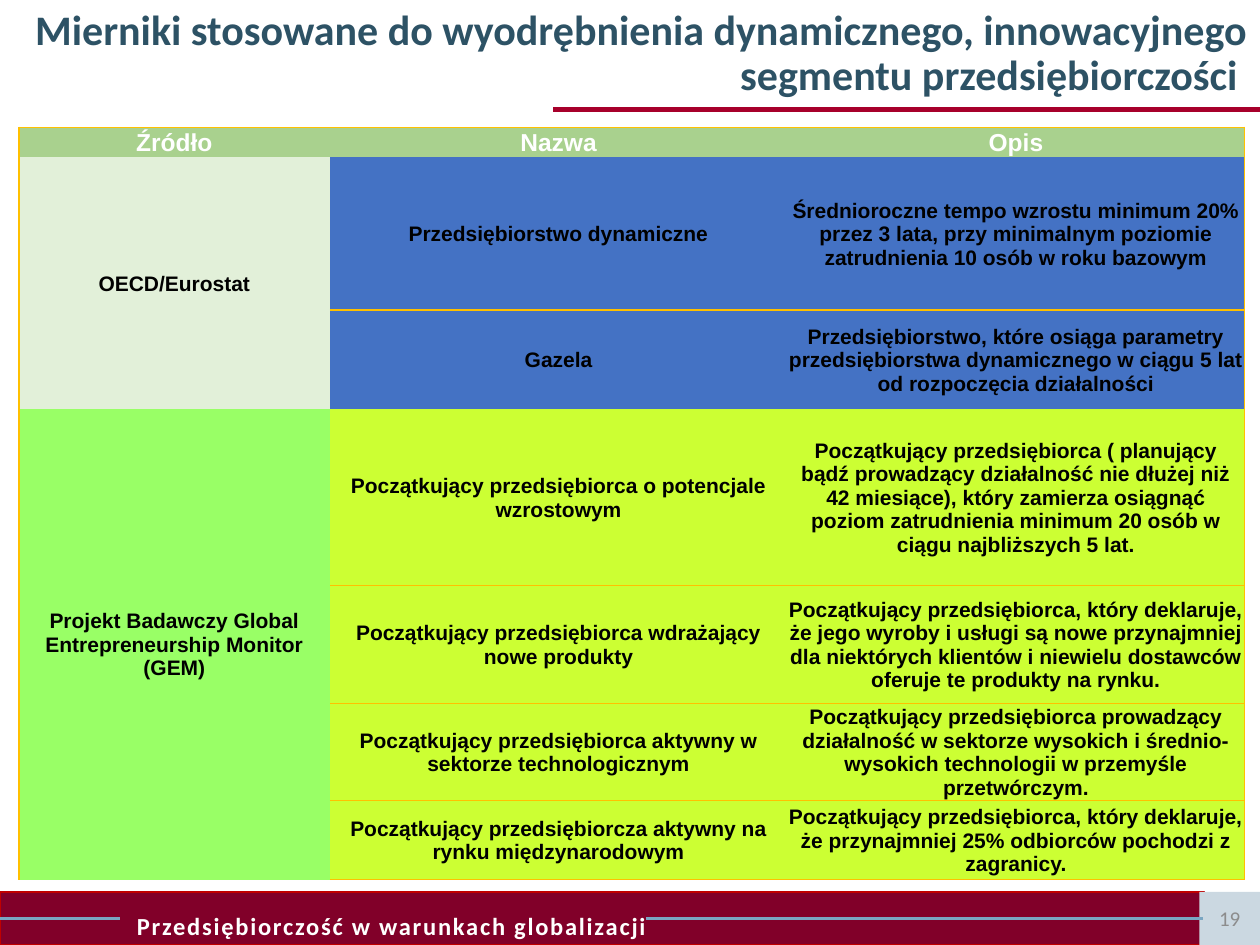
from lxml import etree
from pptx import Presentation
from pptx.dml.color import RGBColor
from pptx.enum.shapes import MSO_CONNECTOR, MSO_SHAPE
from pptx.enum.text import MSO_ANCHOR, MSO_AUTO_SIZE, PP_ALIGN
from pptx.oxml.ns import qn
from pptx.util import Cm, Pt

LEFT, CENTER, RIGHT = PP_ALIGN.LEFT, PP_ALIGN.CENTER, PP_ALIGN.RIGHT
MIDDLE = MSO_ANCHOR.MIDDLE
RECTANGLE = MSO_SHAPE.RECTANGLE
STRAIGHT = MSO_CONNECTOR.STRAIGHT

COLORS = {
    "title": "2D5265", "rule": "A7002B", "footer": "810029",
    "footer_edge": "C00000", "footer_line": "7AA6C2",
    "number_box": "CBD8E1", "number": "8C8C8C",
    "white": "FFFFFF", "black": "000000", "gold": "FFC000",
    "header": "A9D18E", "oecd": "E2F0D9", "blue": "4472C4",
    "gem": "99FF66", "lime": "CCFF33",
}


def color(name):
    return RGBColor.from_string(COLORS[name])


def write(text_frame, text, size, fill, font="Calibri", bold=True,
          align=CENTER, line_spacing=None):
    """Fill a text frame with one formatted paragraph and return it."""
    text_frame.word_wrap = True
    paragraph = text_frame.paragraphs[0]
    paragraph.alignment = align
    if line_spacing:
        paragraph.line_spacing = line_spacing
    run = paragraph.add_run()
    run.text = text
    run.font.name = font
    run.font.size = Pt(size)
    run.font.bold = bold
    run.font.color.rgb = color(fill)
    return paragraph


presentation = Presentation()
presentation.slide_width = Cm(25.4)
presentation.slide_height = Cm(19.05)
slide = presentation.slides.add_slide(presentation.slide_layouts[5])

# Title
title = slide.shapes.title
title.left, title.top, title.width, title.height = Cm(0), Cm(0), Cm(25.4), Cm(2.18)
title.text_frame.auto_size = MSO_AUTO_SIZE.NONE
title.text_frame.vertical_anchor = MIDDLE
write(title.text_frame,
      "Mierniki stosowane do wyodrębnienia dynamicznego, innowacyjnego "
      "segmentu przedsiębiorczości ",
      24, "title", align=RIGHT, line_spacing=0.9)

# Footer bar and page number
footer_top, footer_height = 17.98, 1.07
footer_boxes = []
for left, width, fill in [(0, 24.28, "footer"), (24.18, 1.22, "number_box")]:
    shape = slide.shapes.add_shape(
        RECTANGLE, Cm(left), Cm(footer_top), Cm(width), Cm(footer_height))
    shape.shadow.inherit = False
    shape.fill.solid()
    shape.fill.fore_color.rgb = color(fill)
    shape.line.fill.background()
    shape.text_frame.vertical_anchor = MIDDLE
    footer_boxes.append(shape)
footer, number_box = footer_boxes
footer.line.color.rgb = color("footer_edge")
footer.line.width = Pt(0.75)

paragraph = write(footer.text_frame, "Przedsiębiorczość w warunkach globalizacji",
                  14, "white", align=LEFT, line_spacing=1.5)
paragraph_properties = paragraph._p.get_or_add_pPr()
paragraph_properties.set("marL", str(Cm(3.25)))
paragraph_properties.set("indent", str(Cm(-0.74)))
paragraph.runs[0]._r.get_or_add_rPr().set("spc", "100")
write(number_box.text_frame, "19", 12, "number", bold=False)

# Rules: left, right, height on the slide, colour, width
rules = [
    (11.15, 25.4, 2.21, "rule", 3),
    (13.03, 24.26, 18.52, "footer_line", 1.75),
    (0, 2.41, 18.52, "footer_line", 1.75),
]
for left, right, top, line_color, width in rules:
    rule = slide.shapes.add_connector(STRAIGHT, Cm(left), Cm(top), Cm(right), Cm(top))
    rule.line.color.rgb = color(line_color)
    rule.line.width = Pt(width)
    etree.SubElement(rule._element.spPr, qn("a:effectLst"))

# Table: source, name, description, fill of the source, fill of the rest
rows = [
    ("Źródło", "Nazwa", "Opis", "header", "header"),
    ("OECD/Eurostat", "Przedsiębiorstwo dynamiczne",
     "Średnioroczne tempo wzrostu minimum 20% przez 3 lata, przy minimalnym "
     "poziomie zatrudnienia 10 osób w roku bazowym", "oecd", "blue"),
    ("", "Gazela",
     "Przedsiębiorstwo, które osiąga parametry przedsiębiorstwa dynamicznego "
     "w ciągu 5 lat od rozpoczęcia działalności", "oecd", "blue"),
    ("Projekt Badawczy Global Entrepreneurship Monitor (GEM)",
     "Początkujący przedsiębiorca o potencjale wzrostowym",
     "Początkujący przedsiębiorca ( planujący bądź prowadzący działalność nie "
     "dłużej niż 42 miesiące), który zamierza osiągnąć poziom zatrudnienia "
     "minimum 20 osób w ciągu najbliższych 5 lat.", "gem", "lime"),
    ("", "Początkujący przedsiębiorca wdrażający nowe produkty",
     "Początkujący przedsiębiorca, który deklaruje, że jego wyroby i usługi są "
     "nowe przynajmniej dla niektórych klientów i niewielu dostawców oferuje "
     "te produkty na rynku.", "gem", "lime"),
    ("", "Początkujący przedsiębiorca aktywny w sektorze technologicznym",
     "Początkujący przedsiębiorca prowadzący działalność w sektorze wysokich i "
     "średnio-wysokich technologii w przemyśle przetwórczym.", "gem", "lime"),
    ("", "Początkujący przedsiębiorcza aktywny na rynku międzynarodowym",
     "Początkujący przedsiębiorca, który deklaruje, że przynajmniej 25% "
     "odbiorców pochodzi z zagranicy.", "gem", "lime"),
]
column_widths = [6.27, 9.22, 9.22]
row_heights = [0.6, 3.08, 2, 3.55, 2.38, 1.96, 1.59]
last_row, last_column = len(rows) - 1, len(column_widths) - 1

table = slide.shapes.add_table(
    len(rows), len(column_widths), Cm(0.38), Cm(2.57),
    Cm(sum(column_widths)), Cm(sum(row_heights))).table
for column, width in zip(table.columns, column_widths):
    column.width = Cm(width)
for row, height in zip(table.rows, row_heights):
    row.height = Cm(height)
for first, last in [(1, 2), (3, 6)]:
    table.cell(first, 0).merge(table.cell(last, 0))

for i, (*texts, source_fill, row_fill) in enumerate(rows):
    for j, text in enumerate(texts):
        cell = table.cell(i, j)
        cell.vertical_anchor = MIDDLE
        cell.margin_left = cell.margin_right = cell.margin_top = Cm(0.03)
        cell.margin_bottom = Cm(0)
        # Gold outer frame, and gold lines between the rows of one source
        gold_edges = {
            "a:lnL": j == 0,
            "a:lnR": j == last_column,
            "a:lnT": i == 0 or (j > 0 and i in (2, 4, 5, 6)),
            "a:lnB": i == last_row or (j > 0 and i in (1, 3, 4, 5)),
        }
        for tag, is_gold in gold_edges.items():
            edge = etree.SubElement(cell._tc.get_or_add_tcPr(), qn(tag), w=str(Pt(1)))
            if is_gold:
                solid = etree.SubElement(edge, qn("a:solidFill"))
                etree.SubElement(solid, qn("a:srgbClr"), val=COLORS["gold"])
            else:
                etree.SubElement(edge, qn("a:noFill"))
        cell.fill.solid()
        cell.fill.fore_color.rgb = color(row_fill if j else source_fill)
        if text:
            write(cell.text_frame, text, 12 if i else 14,
                  "black" if i else "white", font="Arial")

presentation.save("out.pptx")
